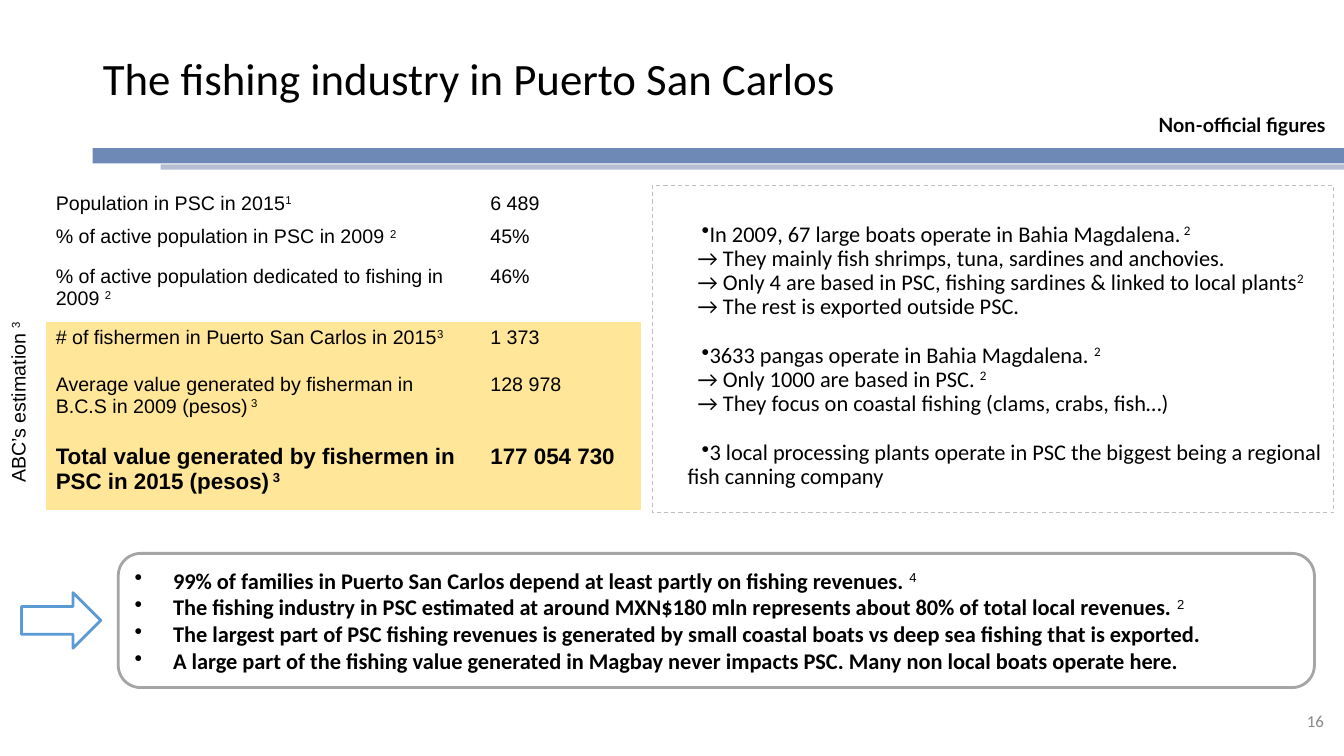
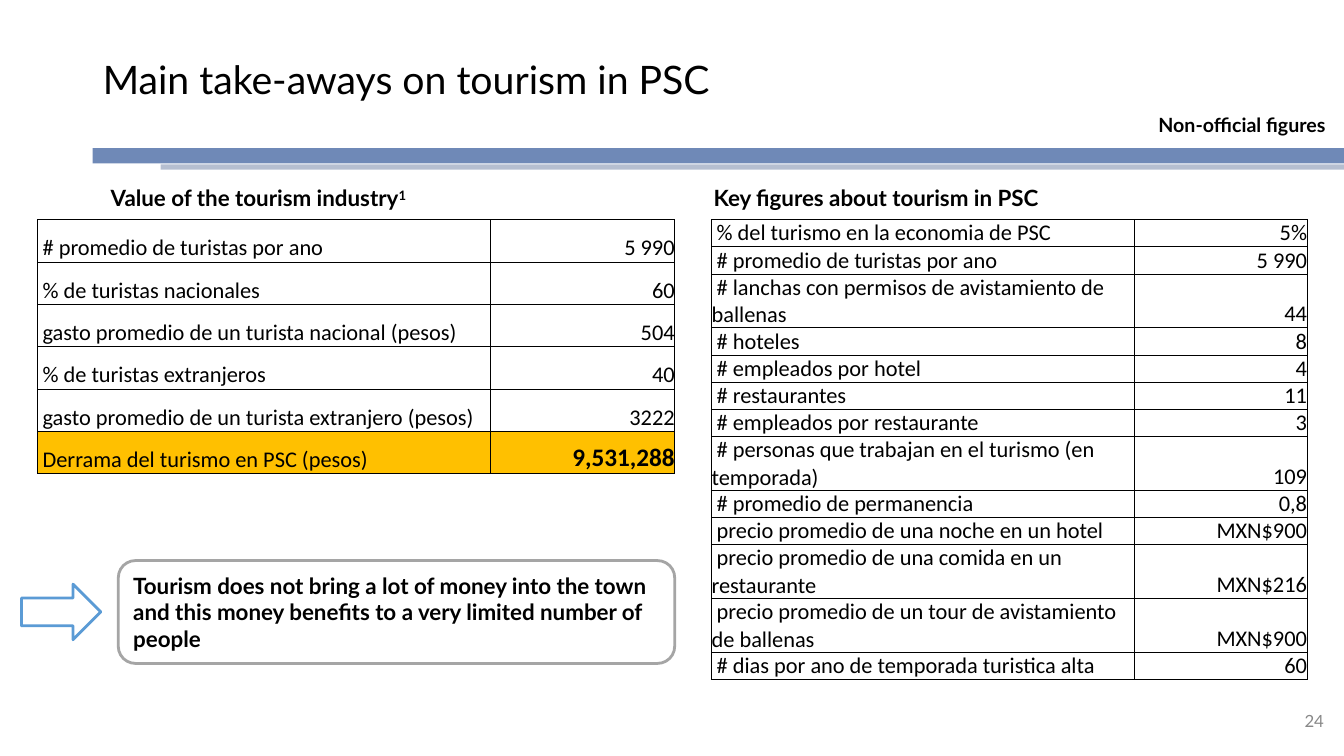
from collections import namedtuple
from pptx import Presentation
from pptx.util import Inches, Pt
from pptx.dml.color import RGBColor as Rgb
from pptx.enum.shapes import MSO_SHAPE as Form
from pptx.enum.dml import MSO_LINE as Dash
from pptx.enum.text import PP_ALIGN as Align, MSO_ANCHOR as Anchor
from pptx.oxml.ns import qn
from lxml.etree import SubElement as Sub

WIDE, HIGH = 13.33, 7.5
BLACK = Rgb(0x00, 0x00, 0x00)
WHITE = Rgb(0xFF, 0xFF, 0xFF)
GREY = Rgb(0x88, 0x88, 0x88)
EDGE = Rgb(0xA5, 0xA5, 0xA5)
PALE = Rgb(0xBF, 0xBF, 0xBF)
BLUE = Rgb(0x2F, 0x55, 0x97)
NAVY = Rgb(0x00, 0x20, 0x60)
SKY = Rgb(0x5B, 0x9B, 0xD5)
SAND = Rgb(0xFF, 0xE6, 0x99)
GOLD = Rgb(0xFF, 0xC0, 0x00)
PLAIN = "{2D5ABB26-0587-4C30-8999-92F81FD0307C}"

Box = namedtuple("Box", "x y w h")

FISH = [
    ("Population in PSC in 2015^1", "6 489"),
    ("% of active population in PSC in 2009 ^2", "45%"),
    ("% of active population dedicated to fishing in 2009 ^2", "46%"),
    ("# of fishermen in Puerto San Carlos in 2015^3", "1 373"),
    ("Average value generated by fisherman in B.C.S in 2009 (pesos)^ 3", "128 978"),
    ("Total value generated by fishermen in PSC in 2015 (pesos)^ 3", "177 054 730"),
]
FLEET = [
    ("In 2009, 67 large boats operate in Bahia Magdalena.^ 2",
     "→ They mainly fish shrimps, tuna, sardines and anchovies.",
     "→ Only 4 are based in PSC, fishing sardines & linked to local plants^2",
     "→ The rest is exported outside PSC."),
    ("3633 pangas operate in Bahia Magdalena. ^2",
     "→ Only 1000 are based in PSC. ^2",
     "→ They focus on coastal fishing (clams, crabs, fish…)"),
    ("3 local processing plants operate in PSC the biggest being "
     "a regional fish canning company",),
]
IMPACT = [
    "99% of families in Puerto San Carlos depend at least partly on fishing revenues. ^4",
    "The fishing industry in PSC estimated at around MXN$180 mln represents "
    "about 80% of total local revenues. ^2",
    "The largest part of PSC fishing revenues is generated by small coastal boats "
    "vs deep sea fishing that is exported.",
    "A large part of the fishing value generated in Magbay never impacts PSC. "
    "Many non local boats operate here.",
]
VALUE = [
    ("# promedio de turistas por ano", "5 990"),
    ("% de turistas nacionales", "60"),
    ("gasto promedio de un turista nacional (pesos)", "504"),
    ("% de turistas extranjeros", "40"),
    ("gasto promedio de un turista extranjero (pesos)", "3222"),
    ("Derrama del turismo en PSC (pesos)", "9,531,288"),
]
KEYS = [
    ("% del turismo en la economia de PSC", "5%"),
    ("# promedio de turistas por ano", "5 990"),
    ("# lanchas con permisos de avistamiento de ballenas", "44"),
    ("# hoteles", "8"),
    ("# empleados por hotel", "4"),
    ("# restaurantes", "11"),
    ("# empleados por restaurante", "3"),
    ("# personas que trabajan en el turismo (en temporada)", "109"),
    ("# promedio de permanencia", "0,8"),
    ("precio promedio de una noche en un hotel", "MXN$900"),
    ("precio promedio de una comida en un restaurante", "MXN$216"),
    ("precio promedio de un tour de avistamiento de ballenas", "MXN$900"),
    ("# dias por ano de temporada turistica alta", "60"),
]


def across(share):
    """Turn a percentage of the slide width into a length."""
    return Inches(WIDE * share / 100)


def down(share):
    """Turn a percentage of the slide height into a length."""
    return Inches(HIGH * share / 100)


def place(box):
    """Turn a box of percentages into left, top, width and height."""
    return across(box.x), down(box.y), across(box.w), down(box.h)


def fit(item, anchor=Anchor.TOP, inset=(0.1, 0.05, 0.1, 0.05)):
    """Set the anchor and insets of a text frame or a table cell."""
    item.vertical_anchor = anchor
    (item.margin_left, item.margin_top,
     item.margin_right, item.margin_bottom) = map(Inches, inset)


def add(frame, text, first=False, size=16, font="Calibri", color=BLACK, bold=False,
        align=Align.LEFT, lines=None, left=0, indent=0, bullet=None, before=0, note=None):
    """Add a paragraph in which the part after a caret is raised."""
    para = frame.paragraphs[0] if first else frame.add_paragraph()
    props = para._p.get_or_add_pPr()
    props.set("marL", str(Inches(left)))
    props.set("indent", str(Inches(indent)))
    if bullet:
        Sub(props, qn("a:buChar")).set("char", bullet)
    else:
        Sub(props, qn("a:buNone"))
    para.alignment = align
    para.space_before = Pt(before)
    if lines:
        para.line_spacing = lines
    for order, part in enumerate(text.split("^")):
        run = para.add_run()
        run.text = part
        run.font.size = Pt(size)
        run.font.name = note if order and note else font
        run.font.bold = bold and not (order and note)
        run.font.color.rgb = color
        if order:
            run._r.get_or_add_rPr().set("baseline", "30000")


def label(slide, box, text, anchor=Anchor.TOP, **look):
    """Add a text box with one paragraph and return its frame."""
    frame = slide.shapes.add_textbox(*place(box)).text_frame
    frame.word_wrap = True
    fit(frame, anchor)
    add(frame, text, first=True, **look)
    return frame


def draw(slide, form, box, fill=None, line=None, width=2, alpha=None):
    """Add a flat shape with its fill and outline."""
    shape = slide.shapes.add_shape(form, *place(box))
    shape.shadow.inherit = False
    if fill is None:
        shape.fill.background()
    else:
        shape.fill.solid()
        shape.fill.fore_color.rgb = fill
    if alpha:
        tint = shape._element.spPr.find(qn("a:solidFill"))[0]
        Sub(tint, qn("a:alpha")).set("val", str(alpha * 1000))
    if line is None:
        shape.line.fill.background()
    else:
        shape.line.color.rgb = line
        shape.line.width = Pt(width)
    shape.text_frame.word_wrap = True
    return shape


def rule(cell):
    """Draw thin black borders round a table cell."""
    props = cell._tc.get_or_add_tcPr()
    for side in ("lnL", "lnR", "lnT", "lnB"):
        line = Sub(props, qn("a:" + side))
        line.set("w", str(Pt(0.5)))
        Sub(Sub(line, qn("a:solidFill")), qn("a:srgbClr")).set("val", str(BLACK))


def grid(slide, box, rows, heights, split, look, tint, ruled=False):
    """Add a two-column table, with look and tint chosen by cell and row."""
    table = slide.shapes.add_table(len(rows), 2, *place(box)).table
    table.first_row = table.horz_banding = False
    table._tbl.tblPr.find(qn("a:tableStyleId")).text = PLAIN
    for col, share in zip(table.columns, (split, 1 - split)):
        col.width = across(box.w * share)
    for r, (row, high) in enumerate(zip(rows, heights)):
        table.rows[r].height = down(high)
        for c, text in enumerate(row):
            cell = table.cell(r, c)
            if ruled:
                rule(cell)
                fit(cell, Anchor.BOTTOM, (0, 0, 0, 0))
            else:
                fit(cell)
            if tint(r) is None:
                cell.fill.background()
            else:
                cell.fill.solid()
                cell.fill.fore_color.rgb = tint(r)
            add(cell.text_frame, text, first=True, **look(r, c))


def start(deck, title, number, size, font, page):
    """Add a slide with the shared title, bands, tag and page number."""
    slide = deck.slides.add_slide(deck.slide_layouts[5])
    draw(slide, Form.RECTANGLE, Box(6.9, 19.6, 93.1, 2), BLUE, alpha=69)
    draw(slide, Form.RECTANGLE, Box(11.95, 21.75, 88.05, 0.7), NAVY, alpha=29)
    head = slide.shapes.title
    head.left, head.top, head.width, head.height = place(Box(6.9, 3.45, 90.4, 14.65))
    fit(head.text_frame, Anchor.MIDDLE, (0.1, 0.1, 0.1, 0.1))
    add(head.text_frame, title, first=True, size=size, font=font, lines=0.9)
    label(slide, Box(85.45, 14.25, 14.5, 4.55), "Non-official figures",
          size=14, font="Lato", bold=True)
    label(slide, Box(76.75, 92.65, 22.5, 5.35), number, Anchor.MIDDLE,
          size=12, font=page, color=GREY, align=Align.RIGHT)
    return slide


def callout(slide, box, texts, **look):
    """Add an arrow that points to a rounded box of conclusions."""
    tall, gap = 7.35, 7.2
    draw(slide, Form.RIGHT_ARROW,
         Box(box.x, box.y + (box.h - tall) / 2, 5.9, tall), WHITE, SKY)
    frame = draw(slide, Form.ROUNDED_RECTANGLE,
                 Box(box.x + gap, box.y, box.w - gap, box.h), WHITE, EDGE).text_frame
    fit(frame, Anchor.MIDDLE)
    for order, text in enumerate(texts):
        add(frame, text, first=order == 0, bold=True, **look)


def catch(slide, box):
    """Add the fishing table and the upright label beside it."""
    last = len(FISH) - 1
    grid(slide, box, FISH, (4.15, 5.2, 8.1, 6.25, 9.35, 9.35), 0.73,
         lambda r, c: dict(size=16 if r == last else 14, font="Arial", bold=r == last),
         lambda r: SAND if r > 2 else None)
    side = label(slide, Box(box.x - 3.32, box.y + 14.95, 3.3, 25.45),
                 "ABC’s estimation ^3", size=14, font="Arial")
    side._txBody.bodyPr.set("vert", "vert270")


def fleet(slide, box):
    """Add the dashed panel about boats and plants."""
    panel = draw(slide, Form.RECTANGLE, box, line=PALE, width=0.75)
    panel.line.dash_style = Dash.DASH
    frame = panel.text_frame
    fit(frame, inset=(0.1, 0.37, 0.1, 0.1))
    for g, (lead, *points) in enumerate(FLEET):
        add(frame, lead, first=g == 0, lines=0.9, left=0.25, indent=0.14,
            bullet="•", before=17.5 if g else 0)
        for point in points:
            add(frame, point, lines=0.9, left=0.25, indent=0.1)


def figures(slide, box, head, shift, rows, high, strong=None):
    """Add a ruled table of figures under its heading."""
    label(slide, Box(box.x + shift, box.y - 5.3, 41.3, 4.95), head,
          font="Lato", bold=True)

    def look(r, c):
        """Choose the format of a figure or its label."""
        if c == 0:
            return dict(indent=0.05)
        return dict(align=Align.RIGHT, size=18 if r == strong else 16, bold=r == strong)

    grid(slide, box, rows, [high] * len(rows), 0.71, look,
         lambda r: GOLD if r == strong else None, ruled=True)


def fishing(deck):
    """Build the slide on fishing."""
    slide = start(deck, "The fishing industry in Puerto San Carlos", "16",
                  32, "Calibri", "Calibri")
    fleet(slide, Box(48.55, 24.55, 50.7, 43.3))
    catch(slide, Box(3.4, 24.8, 44.3, 42.4))
    callout(slide, Box(1.6, 73.2, 96.2, 17.75), IMPACT,
            left=0.38, indent=-0.38, bullet="•", note="Arial")


def tourism(deck):
    """Build the slide on tourism."""
    slide = start(deck, "Main take-aways on tourism in PSC", "24", 28, "Lato", "Lato")
    figures(slide, Box(2.8, 29.05, 47.4, 33.6), "Value of the tourism industry^1",
            4.7, VALUE, 5.6, strong=len(VALUE) - 1)
    figures(slide, Box(52.95, 29.05, 44.3, 46.8), "Key figures about tourism in PSC",
            -0.6, KEYS, 3.6)
    callout(slide, Box(1.6, 74.15, 48.6, 13.6),
            ["Tourism does not bring a lot of money into the town and this money "
             "benefits to a very limited number of people"], font="Lato")


def main():
    """Build and save the deck."""
    deck = Presentation()
    deck.slide_width, deck.slide_height = Inches(WIDE), Inches(HIGH)
    fishing(deck)
    tourism(deck)
    deck.save("out.pptx")


if __name__ == "__main__":
    main()
